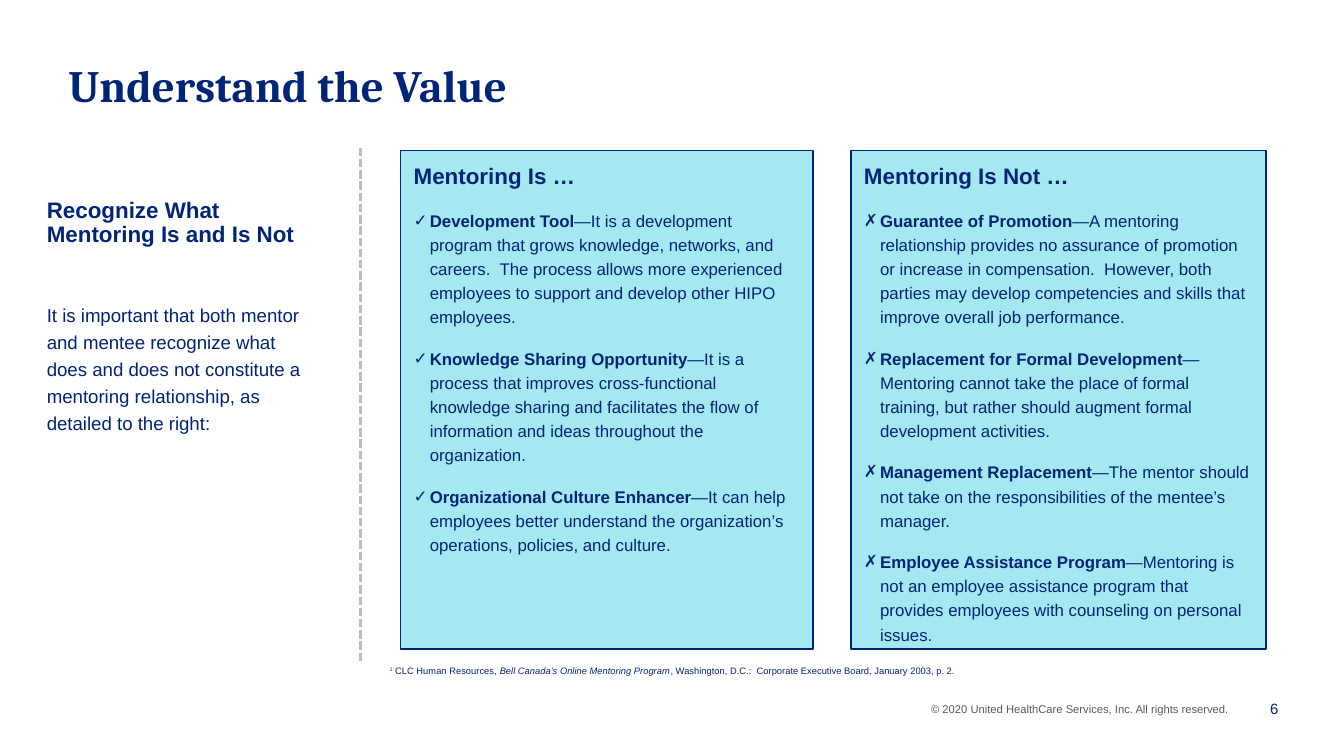
import pptx
import pptx.util
import pptx.dml.color
import pptx.enum.dml
import pptx.enum.shapes
import pptx.enum.text
import lxml.etree
from dataclasses import dataclass
from pptx.util import Inches

rgb = pptx.dml.color.RGBColor.from_string
ALIGN = pptx.enum.text.PP_ALIGN
ANCHOR = pptx.enum.text.MSO_ANCHOR


@dataclass(frozen=True)
class Theme:
    navy: str = "002477"
    aqua: str = "A5E8F1"
    rule: str = "BDBDBD"
    gray: str = "595959"
    heading_font: str = "Cambria"
    body_font: str = "Arial"
    title: float = 24
    heading: float = 12
    body: float = 10
    bullet: float = 9
    page: float = 8
    legal: float = 6
    footnote: float = 5


theme = Theme()


def add_run(paragraph, text, size, bold=False, italic=False, color=theme.navy, face=theme.body_font):
    run = paragraph.add_run()
    run.text = text
    run.font.size = pptx.util.Pt(size)
    run.font.name = face
    run.font.bold = bold
    run.font.italic = italic
    run.font.color.rgb = rgb(color)
    return run


def add_text_box(left, top, width, height):
    frame = slide.shapes.add_textbox(Inches(left), Inches(top), Inches(width), Inches(height)).text_frame
    frame.word_wrap = True
    return frame


# Widescreen slide, 16:9
deck = pptx.Presentation()
deck.slide_width = Inches(10)
deck.slide_height = Inches(10) * 9 // 16
slide = deck.slides.add_slide(deck.slide_layouts[6])

# Copyright, title and page number
copyright_line = add_text_box(6.83, 5.18, 2.58, 0.2)
add_run(copyright_line.paragraphs[0], "© 2020 United HealthCare Services, Inc. All rights reserved.",
        theme.legal, color=theme.gray)

title = add_text_box(0.41, 0.38, 9.1, 0.6)
add_run(title.paragraphs[0], "Understand the Value", theme.title, bold=True, face=theme.heading_font)

page_number = add_text_box(9.22, 5.12, 0.39, 0.31)
page_number.vertical_anchor = ANCHOR.MIDDLE
page_number.paragraphs[0].alignment = ALIGN.RIGHT
add_run(page_number.paragraphs[0], "6", theme.page)

# Introduction on the left
intro = add_text_box(0.25, 1.43, 2.12, 3.38)
intro_heading = intro.paragraphs[0]
intro_heading.line_spacing = 0.9
intro_heading.space_after = pptx.util.Pt(6)
add_run(intro_heading, "Recognize What Mentoring Is and Is Not", theme.heading, bold=True)
intro_body = intro.add_paragraph()
intro_body.line_spacing = 1.2
intro_body.space_before = pptx.util.Pt(22)
add_run(intro_body, "It is important that both mentor and mentee recognize what does and does not "
        "constitute a mentoring relationship, as detailed to the right:", theme.body)

# Two panels: left, width, heading, bullet mark, points
panels = [
    (2.98, 3.07, "Mentoring Is …", "✓", [
        ("Development Tool",
         "—It is a development program that grows knowledge, networks, and careers.  The process allows "
         "more experienced employees to support and develop other HIPO employees."),
        ("Knowledge Sharing Opportunity",
         "—It is a process that improves cross-functional knowledge sharing and facilitates the flow of "
         "information and ideas throughout the organization."),
        ("Organizational Culture Enhancer",
         "—It can help employees better understand the organization’s operations, policies, and culture."),
    ]),
    (6.33, 3.09, "Mentoring Is Not …", "✗", [
        ("Guarantee of Promotion",
         "—A mentoring relationship provides no assurance of promotion or increase in compensation.  "
         "However, both parties may develop competencies and skills that improve overall job performance."),
        ("Replacement for Formal Development",
         "—Mentoring cannot take the place of formal training, but rather should augment formal "
         "development activities."),
        ("Management Replacement",
         "—The mentor should not take on the responsibilities of the mentee’s manager."),
        ("Employee Assistance Program",
         "—Mentoring is not an employee assistance program that provides employees with counseling on "
         "personal issues."),
    ]),
]
for left, width, heading, mark, points in panels:
    panel = slide.shapes.add_shape(pptx.enum.shapes.MSO_SHAPE.RECTANGLE,
                                   Inches(left), Inches(1.12), Inches(width), Inches(3.71))
    panel.shadow.inherit = False
    panel.fill.solid()
    panel.fill.fore_color.rgb = rgb(theme.aqua)
    panel.line.color.rgb = rgb(theme.navy)
    panel.line.width = pptx.util.Pt(1)
    content = panel.text_frame
    content.word_wrap = True
    content.vertical_anchor = ANCHOR.TOP
    content.margin_right = Inches(0.11)

    panel_heading = content.paragraphs[0]
    add_run(panel_heading, heading, theme.heading, bold=True)
    for term, explanation in points:
        point = content.add_paragraph()
        point.space_before = pptx.util.Pt(3)
        properties = point._p.get_or_add_pPr()
        properties.set("marL", str(Inches(0.12)))
        properties.set("indent", str(Inches(-0.12)))
        bullet_color = lxml.etree.SubElement(properties, pptx.oxml.ns.qn("a:buClr"))
        lxml.etree.SubElement(bullet_color, pptx.oxml.ns.qn("a:srgbClr"), val=theme.navy)
        lxml.etree.SubElement(properties, pptx.oxml.ns.qn("a:buFont"), typeface=theme.body_font)
        lxml.etree.SubElement(properties, pptx.oxml.ns.qn("a:buChar"), char=mark)
        add_run(point, term, theme.bullet, bold=True)
        add_run(point, explanation, theme.bullet)
    for paragraph in content.paragraphs:
        paragraph.alignment = ALIGN.LEFT
        paragraph.line_spacing = 1.2
        paragraph.space_after = pptx.util.Pt(6)

# Dashed divider
divider = slide.shapes.add_connector(pptx.enum.shapes.MSO_CONNECTOR.STRAIGHT,
                                     Inches(2.68), Inches(1.1), Inches(2.68), Inches(4.93))
divider.line.color.rgb = rgb(theme.rule)
divider.line.width = pptx.util.Pt(1.5)
divider.line.dash_style = pptx.enum.dml.MSO_LINE.SQUARE_DOT
lxml.etree.SubElement(divider._element.spPr, pptx.oxml.ns.qn("a:effectLst"))

# Footnote
footnote = add_text_box(2.8, 4.95, 6.49, 0.08)
footnote.margin_top = footnote.margin_bottom = 0
citation = footnote.paragraphs[0]
note_mark = add_run(citation, "1", theme.footnote)
note_mark.font._element.set("baseline", "30000")
add_run(citation, " CLC Human Resources, ", theme.footnote)
add_run(citation, "Bell Canada’s Online Mentoring Program", theme.footnote, italic=True)
add_run(citation, ", Washington, D.C.:  Corporate Executive Board, January 2003, p. 2.", theme.footnote)

deck.save("out.pptx")
